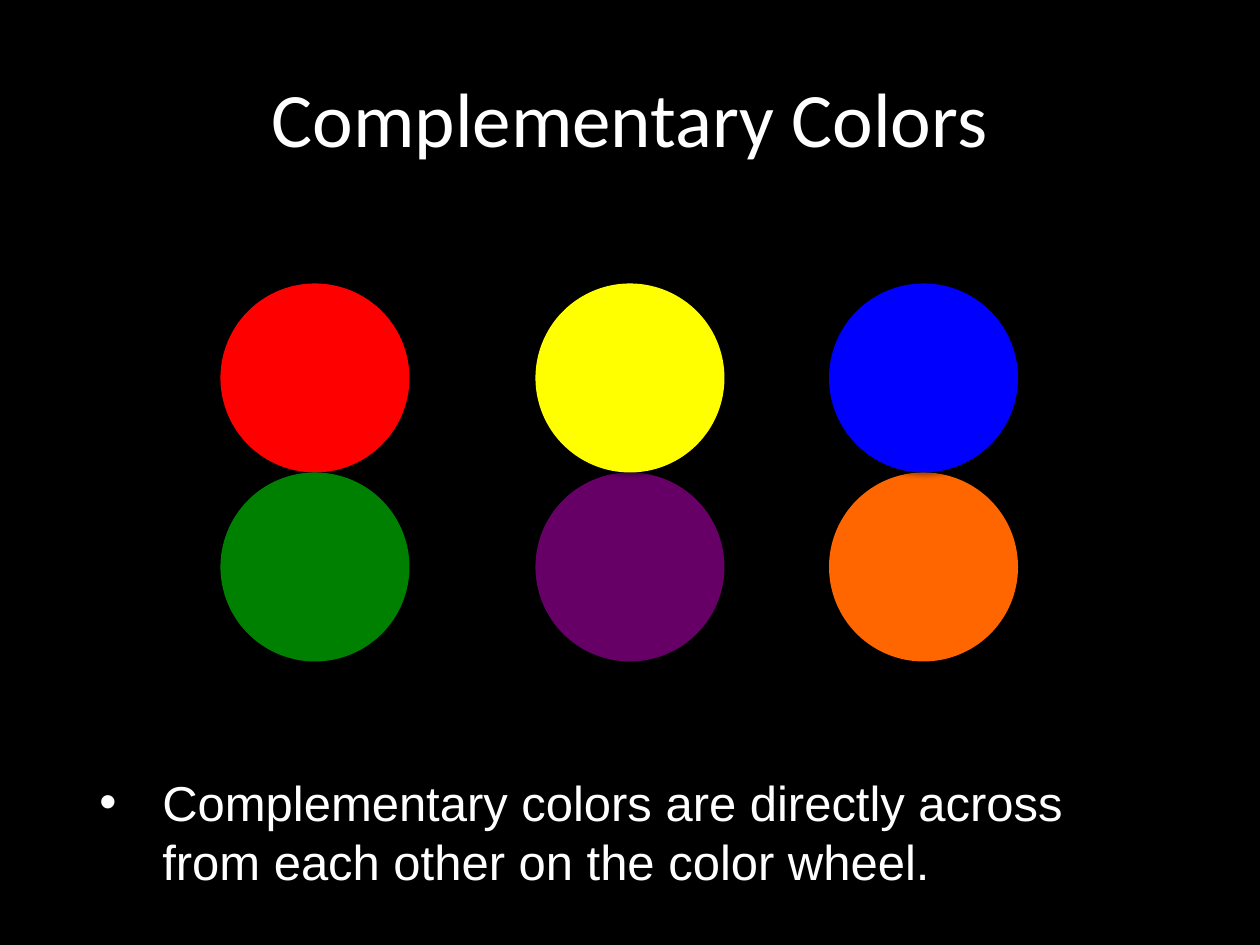
from lxml import etree
from pptx import Presentation
from pptx import util as u
from pptx.dml.color import RGBColor
from pptx.enum import shapes, text
from pptx.oxml import ns

TITLE = "Complementary Colors"
NOTE = "Complementary colors are directly across from each other on the color wheel."

DIAMETER = 108
TOP = 162
# Left edge and (row, colour) of each pair, back to front
PAIRS = [
    (126, [(0, "FF0000"), (1, "008000")]),
    (306, [(1, "660066"), (0, "FFFF00")]),
    (473.76, [(1, "FF6600"), (0, "0000FF")]),
]


def colour(value):
    return RGBColor.from_string(value)


def add_element(parent, tag, **attributes):
    return etree.SubElement(parent, ns.qn(tag), attributes)


def add_text(page, place, words, font, size):
    box = page.shapes.add_textbox(*map(u.Pt, place))
    box.text_frame.word_wrap = True
    para = box.text_frame.paragraphs[0]
    para.text = words
    return box, para, (font, size)


def style(para, font, size):
    para.font.name = font
    para.font.size = u.Pt(size)
    para.font.color.rgb = colour("FFFFFF")


def add_circle(page, left, top, fill):
    circle = page.shapes.add_shape(
        shapes.MSO_SHAPE.OVAL, *map(u.Pt, (left, top, DIAMETER, DIAMETER)))
    circle.fill.solid()
    circle.fill.fore_color.rgb = colour(fill)
    circle.line.fill.background()
    # Soft shadow straight below
    circle.shadow.inherit = False
    effects = circle.element.spPr.find(ns.qn("a:effectLst"))
    shadow = add_element(effects, "a:outerShdw", blurRad=str(u.Pt(3.1)),
                         dist=str(u.Pt(1.8)), dir="5400000", rotWithShape="0")
    shade = add_element(shadow, "a:srgbClr", val="000000")
    add_element(shade, "a:alpha", val="35000")


deck = Presentation()
deck.slide_width, deck.slide_height = u.Pt(720), u.Pt(540)
page = deck.slides.add_slide(deck.slide_layouts[6])
page.background.fill.solid()
page.background.fill.fore_color.rgb = colour("000000")

# Title
box, para, face = add_text(page, (36, 21.6, 648, 90), TITLE, "Calibri", 44)
box.text_frame.vertical_anchor = text.MSO_ANCHOR.MIDDLE
para.alignment = text.PP_ALIGN.CENTER
style(para, *face)

# Complementary pairs, one above the other
for left, circles in PAIRS:
    for row, fill in circles:
        add_circle(page, left, TOP + row * DIAMETER, fill)

# Bulleted explanation
box, para, face = add_text(page, (49.68, 437.76, 617.76, 74.88), NOTE, "Arial", 28)
box.text_frame.auto_size = text.MSO_AUTO_SIZE.SHAPE_TO_FIT_TEXT
properties = para._p.get_or_add_pPr()
properties.set("marL", str(u.Pt(36)))
properties.set("indent", str(u.Pt(-36)))
add_element(properties, "a:buFont", typeface="Arial")
add_element(properties, "a:buChar", char="•")
style(para, *face)

deck.save("out.pptx")
